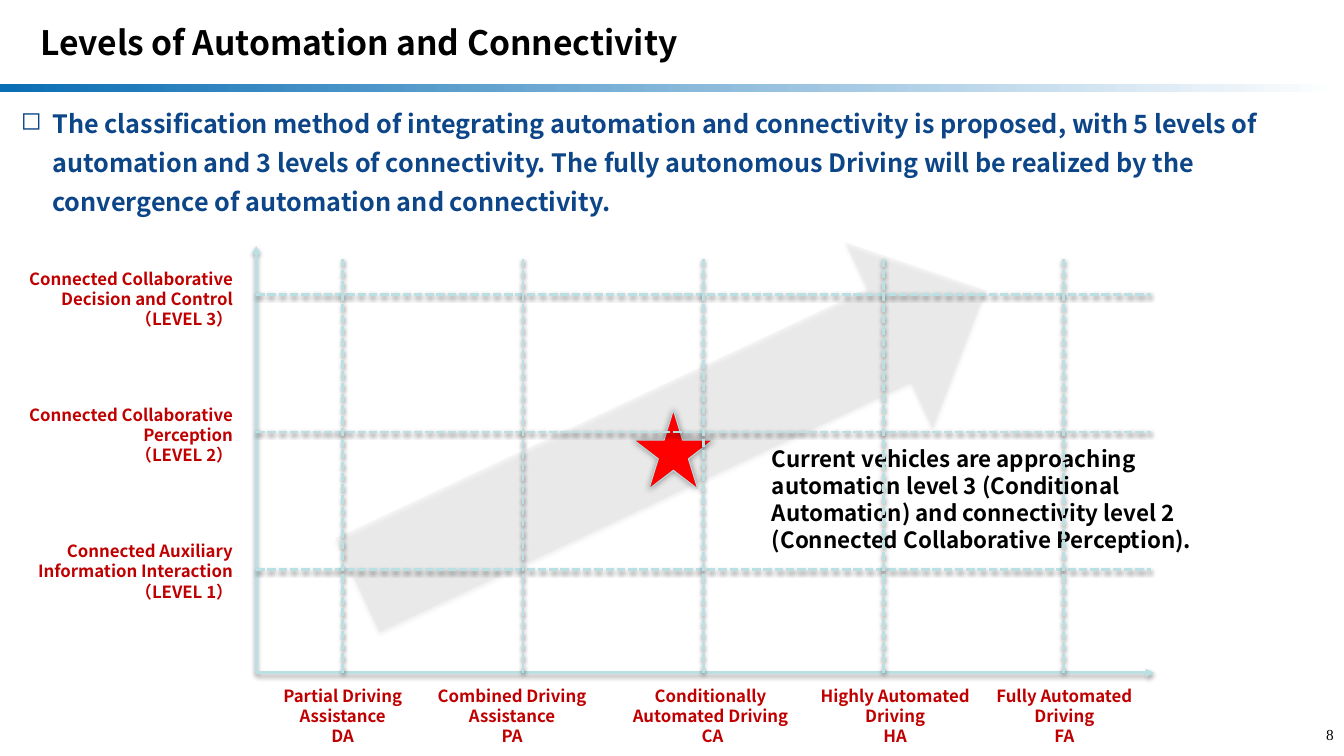
from lxml import etree
from pptx import Presentation
from pptx.dml.color import RGBColor
from pptx.enum.dml import MSO_LINE
from pptx.enum.shapes import MSO_CONNECTOR, MSO_SHAPE
from pptx.enum.text import MSO_ANCHOR, PP_ALIGN
from pptx.oxml import parse_xml
from pptx.oxml.ns import nsdecls, qn
from pptx.util import Pt

SANS, SERIF = "Noto Sans CJK SC", "Times New Roman"
BLACK = RGBColor(0, 0, 0)
WHITE = RGBColor(255, 255, 255)
BLUE = RGBColor(0x0A, 0x6E, 0xB4)
NAVY = RGBColor(0x0D, 0x46, 0x88)
MAROON = RGBColor(0xC0, 0, 0)
RED = RGBColor(255, 0, 0)
AQUA = RGBColor(0xBB, 0xE0, 0xE3)
RIM = RGBColor(0xB6, 0xDC, 0xDF)
GREY = RGBColor(0xD9, 0xD9, 0xD9)
LEFT, CENTER, RIGHT = PP_ALIGN.LEFT, PP_ALIGN.CENTER, PP_ALIGN.RIGHT
TOP, MIDDLE = MSO_ANCHOR.TOP, MSO_ANCHOR.MIDDLE
STRAIGHT, DASH = MSO_CONNECTOR.STRAIGHT, MSO_LINE.SQUARE_DOT

TITLE = "Levels of Automation and Connectivity"
CLAIM = ("The classification method of integrating automation and connectivity "
         "is proposed, with 5 levels of automation and 3 levels of connectivity. "
         "The fully autonomous Driving will be realized by the convergence of "
         "automation and connectivity.")
NOTE = ("Current vehicles are approaching automation level 3 (Conditional "
        "Automation) and connectivity level 2 (Connected Collaborative Perception).")
PAGE = "8"
# Connectivity levels, top to bottom
ROWS = [
    ["Connected Collaborative", "Decision and Control", "（LEVEL 3）"],
    ["Connected Collaborative", "Perception", "（LEVEL 2）"],
    ["Connected Auxiliary Information Interaction", "（LEVEL 1）"],
]
# Automation levels: label centre, label width, lines
COLS = [
    (244.8, 118, ["Partial Driving Assistance", "DA"]),
    (365.8, 142.6, ["Combined Driving Assistance", "PA"]),
    (507.6, 161.3, ["Conditionally Automated Driving", " CA"]),
    (639.4, 142.6, ["Highly Automated Driving", "HA"]),
    (760.3, 115.2, ["Fully Automated Driving", "FA"]),
]
ORIGIN_X, ORIGIN_Y = 183, 480.6
COL_X, COL_STEP = 244.8, 128.75
ROW_Y, ROW_STEP = 210.3, 98.3
LABEL_H = 51

deck = Presentation()
deck.slide_width, deck.slide_height = Pt(960), Pt(540)
slide = deck.slides.add_slide(deck.slide_layouts[6])
shapes = slide.shapes


def shade(shape, alpha, blur, dist, turn=90):
    """Give the shape a soft black shadow; alpha is in percent."""
    props = shape._element.spPr
    for old in props.findall(qn("a:effectLst")):
        props.remove(old)
    props.append(parse_xml(
        f'<a:effectLst {nsdecls("a")}><a:outerShdw blurRad="{Pt(blur)}" '
        f'dist="{Pt(dist)}" dir="{turn * 60000}" rotWithShape="0">'
        f'<a:srgbClr val="000000"><a:alpha val="{alpha * 1000}"/></a:srgbClr>'
        '</a:outerShdw></a:effectLst>'))


def write(box, lines, size, color, align=LEFT, font=SANS, bold=True, anchor=TOP):
    """Add a text box with one paragraph per line."""
    frame = shapes.add_textbox(*map(Pt, box)).text_frame
    frame.word_wrap, frame.vertical_anchor = True, anchor
    frame.text = "\n".join(lines)
    for para in frame.paragraphs:
        para.alignment = align
        for run in para.runs:
            run.font.size, run.font.bold, run.font.name = Pt(size), bold, font
            run.font.color.rgb = color
            face = etree.SubElement(run.font._element, qn("a:ea"))
            face.set("typeface", font)
    return frame


def rule(x1, y1, x2, y2, arrow=False):
    """Draw an axis with an arrowhead, or a dashed grid line."""
    line = shapes.add_connector(STRAIGHT, Pt(x1), Pt(y1), Pt(x2), Pt(y2))
    line.line.color.rgb, line.line.width = AQUA, Pt(2)
    if arrow:
        etree.SubElement(line.line._get_or_add_ln(), qn("a:tailEnd"), type="triangle")
    else:
        line.line.dash_style = DASH
    shade(line, 38, 3.1, 1.6)


def block(kind, *box):
    shape = shapes.add_shape(kind, *map(Pt, box))
    shape.shadow.inherit = False
    return shape


# Header
write((914.4, 514.8, 45.4, 25.2), [PAGE], 10.9, BLACK, RIGHT, SERIF, False)
bar = block(MSO_SHAPE.RECTANGLE, 0, 60, 960, 5.8)
bar.line.fill.background()
bar.fill.gradient()
bar.fill.gradient_angle = 0
for stop, color in zip(bar.fill.gradient_stops, (BLUE, WHITE)):
    stop.color.rgb = color

# Trend arrow
trend = block(MSO_SHAPE.RIGHT_ARROW, 231.8, 239, 496.1, 147.6)
trend.adjustments[0], trend.adjustments[1] = 0.5, 0.52
trend.rotation = 334.9
trend.line.fill.background()
trend.fill.solid()
trend.fill.fore_color.rgb = GREY
tint = trend._element.spPr.find(qn("a:solidFill"))[0]
etree.SubElement(tint, qn("a:alpha"), val="20000")
shade(trend, 35, 3.1, 1.8)

write((21.6, 0.7, 718.6, 59), [TITLE], 24, BLACK, anchor=MIDDLE)

# Axes and their labels
rule(ORIGIN_X, ORIGIN_Y, ORIGIN_X, 175.7, True)
rule(ORIGIN_X, ORIGIN_Y, 824.4, ORIGIN_Y, True)
for i, lines in enumerate(ROWS):
    write((3, 188.3 + i * 97.3, 170.5, LABEL_H), lines, 12, MAROON, RIGHT)
for mid, width, lines in COLS:
    write((mid - width / 2, 486, width, LABEL_H), lines, 12, MAROON, CENTER)

# Present state
star = block(MSO_SHAPE.STAR_5_POINT, 452.9, 293, 56.2, 56.2)
star.fill.solid()
star.fill.fore_color.rgb = RED
star.line.color.rgb, star.line.width = RIM, Pt(0.75)
shade(star, 40, 5, 0, 0)
write((544.3, 314.6, 341.3, 85), [NOTE], 16, BLACK)

claim = write((7.9, 67, 962.6, 92.2), [CLAIM], 18, NAVY).paragraphs[0]
claim.line_spacing = 1.3
props = claim._p.get_or_add_pPr()
props.set("marL", str(Pt(22.5)))
props.set("indent", str(Pt(-22.5)))
etree.SubElement(props, qn("a:buChar"), char="◻")

# Grid
for i in range(len(ROWS)):
    y = ROW_Y + i * ROW_STEP
    rule(ORIGIN_X, y, 822.2, y)
for i in range(len(COLS)):
    x = COL_X + i * COL_STEP
    rule(x, ORIGIN_Y, x, 183.6)

deck.save("out.pptx")
